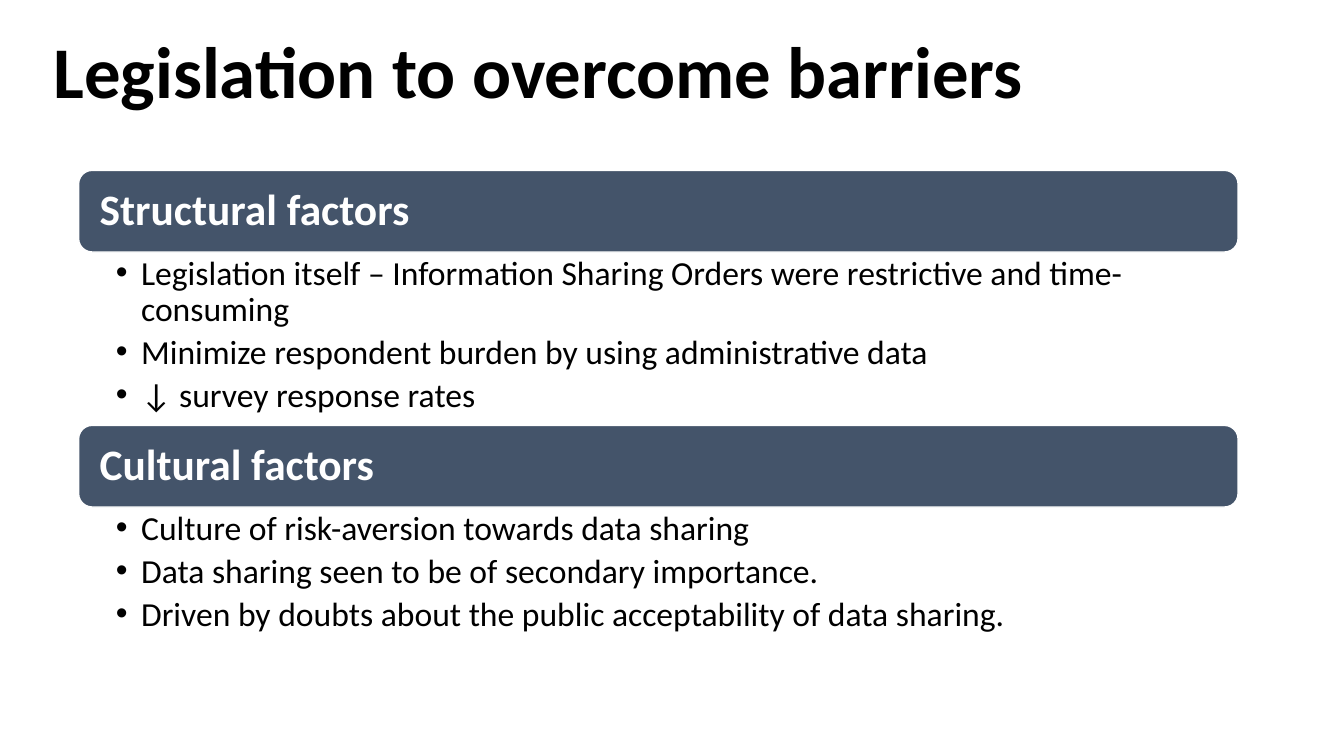
from lxml.etree import SubElement
from pptx import Presentation
from pptx.dml.color import RGBColor
from pptx.enum.shapes import MSO_SHAPE
from pptx.enum.text import MSO_ANCHOR, PP_ALIGN
from pptx.oxml.ns import qn
from pptx.util import Inches, Pt

COLORS = {"bar": "44546A", "light": "FFFFFF", "dark": "000000"}
BAR = 0.81
FACTORS = [
    (1.69, 1.72, "Structural factors", [
        "Legislation itself – Information Sharing Orders were restrictive and time-consuming",
        "Minimize respondent burden by using administrative data",
        "↓ survey response rates",
    ]),
    (4.22, 1.37, "Cultural factors", [
        "Culture of risk-aversion towards data sharing",
        "Data sharing seen to be of secondary importance.",
        "Driven by doubts about the public acceptability of data sharing.",
    ]),
]


def color(name):
    """Return the named palette colour."""
    return RGBColor.from_string(COLORS[name])


def write(shape, lines, size, ink="dark", bold=False, align=PP_ALIGN.LEFT,
          anchor=MSO_ANCHOR.MIDDLE, inset=(0.1, 0.05, 0.1, 0.05), after=0, bullet=False):
    """Fill a shape with formatted paragraphs."""
    frame = shape.text_frame
    frame.word_wrap = True
    frame.vertical_anchor = anchor
    (frame.margin_left, frame.margin_top,
     frame.margin_right, frame.margin_bottom) = map(Inches, inset)
    frame.text = "\n".join(lines)
    for para in frame.paragraphs:
        para.alignment = align
        para.line_spacing = 0.9
        para.space_after = Pt(after)
        font = para.runs[0].font
        font.name, font.size, font.bold = "Calibri", Pt(size), bold
        font.color.rgb = color(ink)
        if bullet:
            props = para._p.get_or_add_pPr()
            props.set("marL", str(Inches(0.25)))
            props.set("indent", str(Inches(-0.25)))
            SubElement(props, qn("a:buFont")).set("typeface", "Arial")
            SubElement(props, qn("a:buChar")).set("char", "•")


def add_title(slide, left, top, width, height):
    """Place the slide title in the given box."""
    box = slide.shapes.add_textbox(*map(Inches, (left, top, width, height)))
    write(box, ["Legislation to overcome barriers"], 52, bold=True, align=PP_ALIGN.CENTER)


def add_factor(slide, left, top, width, height, head, points):
    """Place a heading bar with its bullet list below it."""
    bar = slide.shapes.add_shape(
        MSO_SHAPE.ROUNDED_RECTANGLE, *map(Inches, (left, top, width, BAR)))
    bar.shadow.inherit = False
    bar.fill.solid()
    bar.fill.fore_color.rgb = color("bar")
    bar.line.color.rgb = color("light")
    bar.line.width = Pt(1)
    write(bar, [head], 31, ink="light", bold=True, inset=(0.17,) * 4)
    body = slide.shapes.add_textbox(*map(Inches, (left, top + BAR, width, height - BAR)))
    write(body, points, 24, anchor=MSO_ANCHOR.TOP,
          inset=(0.37, 0.04, 0.24, 0.04), after=4.8, bullet=True)


def main():
    """Build and save the slide."""
    deck = Presentation()
    deck.slide_width, deck.slide_height = Inches(13.33), Inches(7.5)
    slide = deck.slides.add_slide(deck.slide_layouts[6])
    add_title(slide, -0.41, 0.12, 11.5, 1.24)
    for top, depth, head, points in FACTORS:
        add_factor(slide, 0.78, top, 11.5, BAR + depth, head, points)
    deck.save("out.pptx")


if __name__ == "__main__":
    main()
